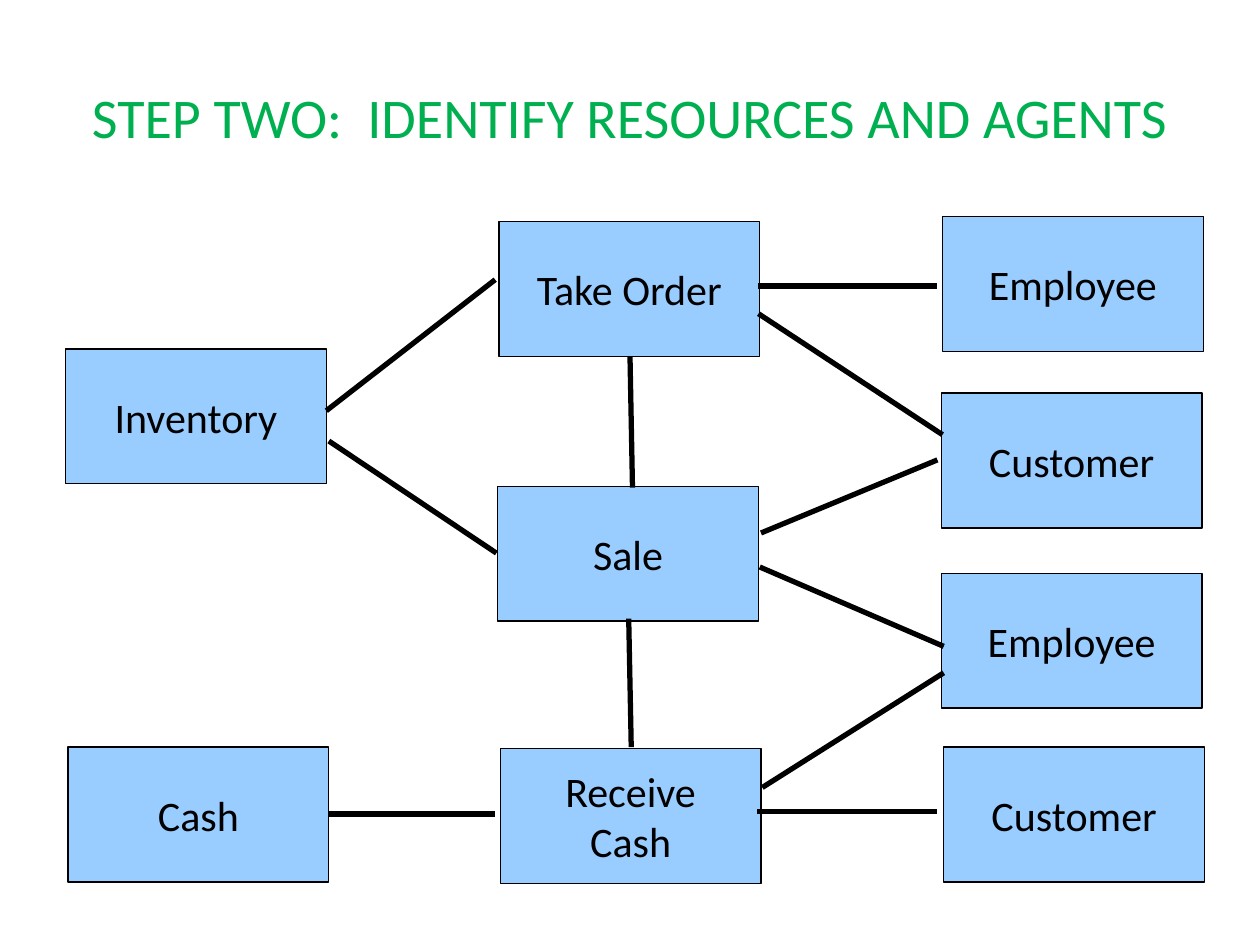
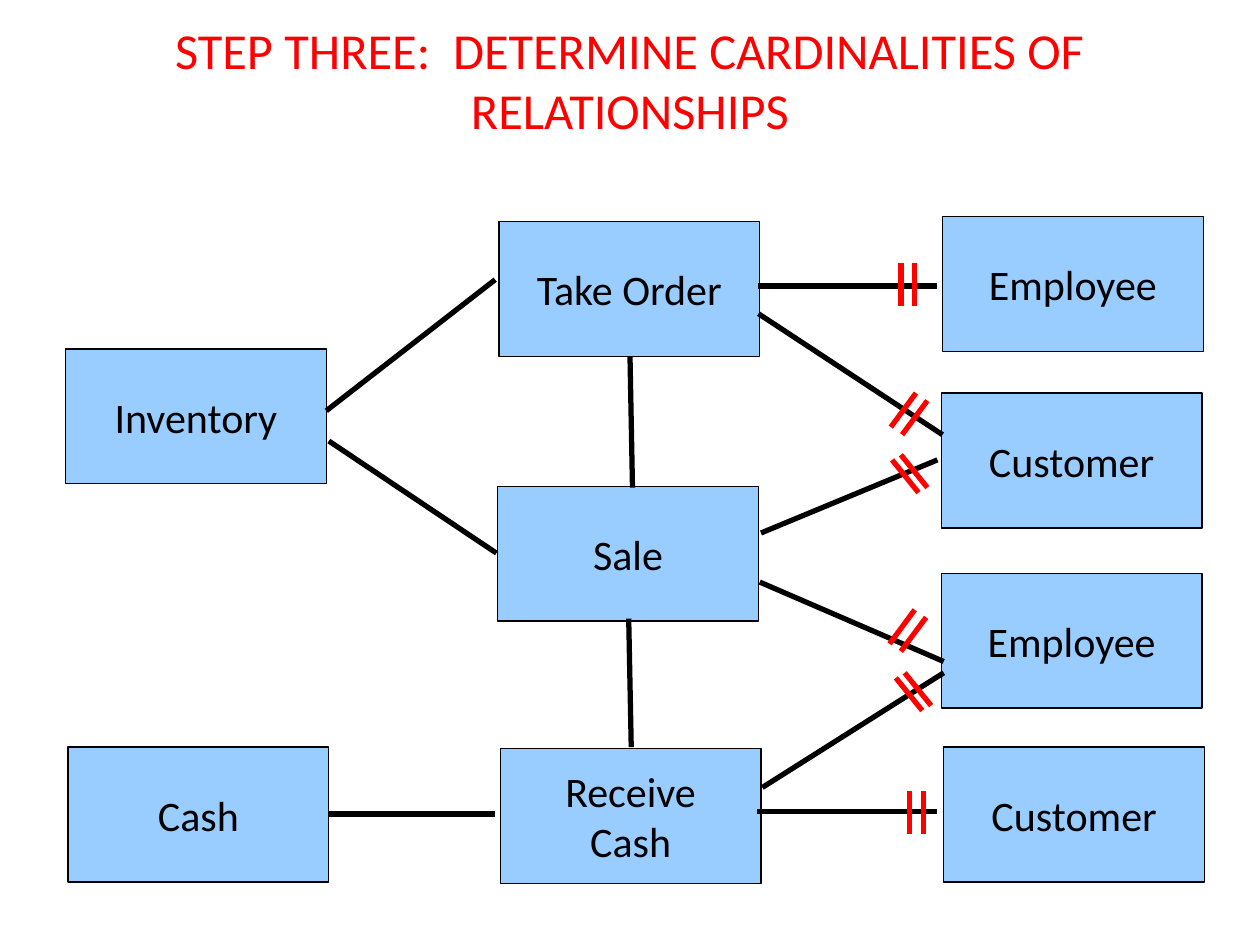
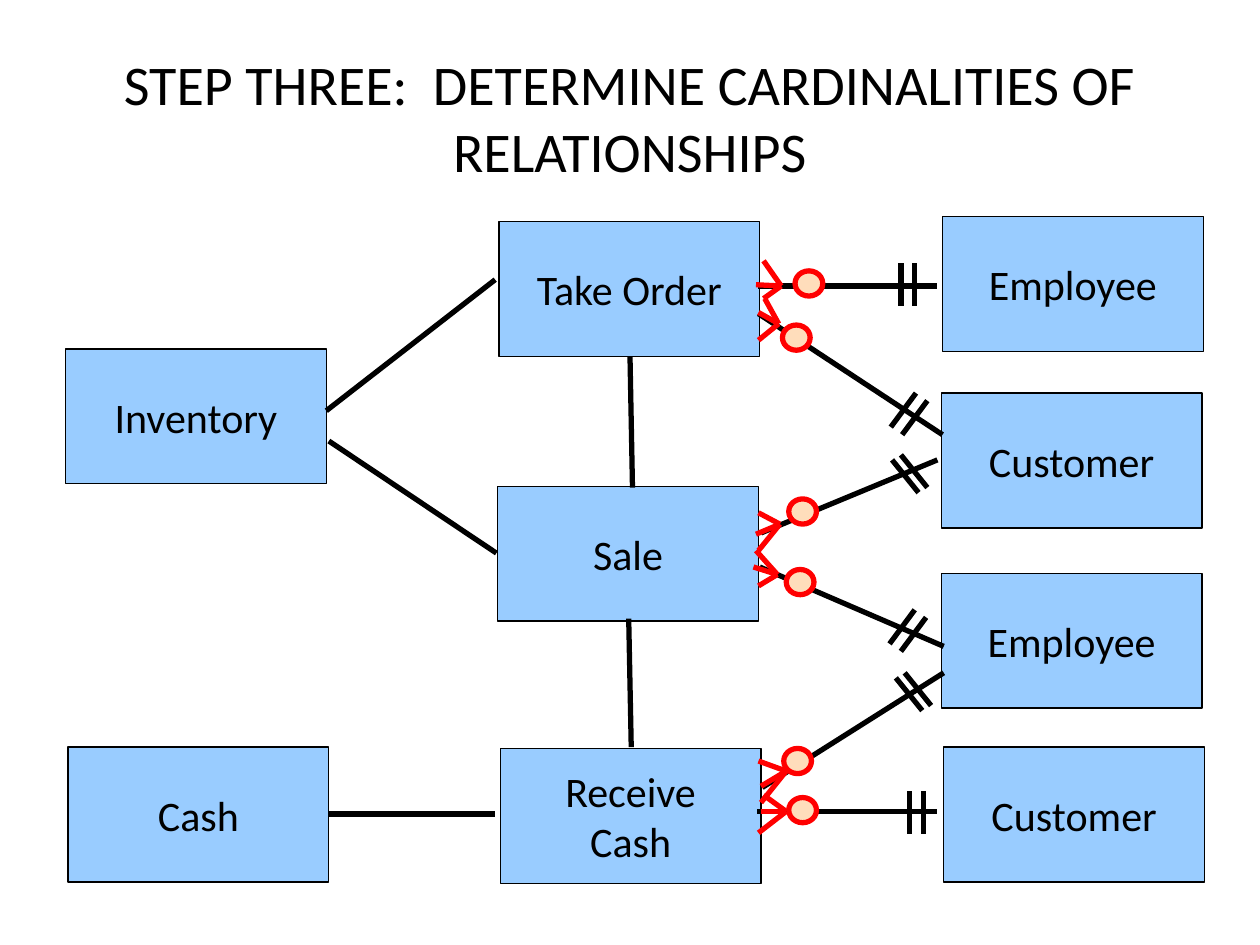
import pptx
import pptx.dml.color
import pptx.enum.shapes
import pptx.enum.text
import pptx.util
from lxml import etree
from pptx.util import Inches

FONT = "Calibri"
BLACK, RED, GREEN = "000000", "FF0000", "00B050"
BOX_FILL, CIRCLE_FILL = "99CCFF", "FFDDBB"
BOX_SIZE = (2.07, 1.07)
CIRCLE_SIZE = (0.22, 0.2)
THIN, THICK = 0.75, 3

STEP_THREE = "STEP THREE:  DETERMINE CARDINALITIES OF RELATIONSHIPS"

# Per slide: title, its top, height, size and colour, vertical shift of the
# link from Sale to Employee, colour of the "one" ticks, whether "many" shows
SLIDES = [
    ("STEP TWO:  IDENTIFY RESOURCES AND AGENTS", 0.3, 1.25, 32, GREEN, 0, None, False),
    (STEP_THREE, 0.17, 0.92, 28.8, RED, 0.12, RED, False),
    (STEP_THREE, 0.3, 1.25, 32, BLACK, 0, BLACK, True),
]

# Entity lines, left, top
RESOURCES = [(["Inventory"], 0.52, 2.77), (["Cash"], 0.54, 5.93)]
EVENTS = [(["Take Order"], 3.96, 1.76), (["Sale"], 3.95, 3.86),
          (["Receive", "Cash"], 3.97, 5.94)]
AGENTS = [(["Employee"], 7.48, 1.72), (["Customer"], 7.47, 3.12),
          (["Employee"], 7.47, 4.55), (["Customer"], 7.49, 5.93)]

# Start and end of each relationship
LINKS = [
    ((5, 2.83), (5.02, 3.87)),
    ((4.99, 4.91), (5.01, 5.93)),
    ((2.59, 3.26), (3.93, 2.22)),
    ((2.61, 3.5), (3.94, 4.39)),
    ((2.61, 6.46), (3.93, 6.46)),
    ((6.02, 2.27), (7.44, 2.27)),
    ((6.02, 2.49), (7.48, 3.45)),
    ((6.04, 4.23), (7.44, 3.65)),
    ((6.05, 6.25), (7.49, 5.34)),
    ((6.01, 6.44), (7.44, 6.44)),
]
SALE_EMPLOYEE = ((6.03, 4.5), (7.49, 5.13))

# Tick direction by slope of the link: length of a tick, step to its twin
TICKS = {
    "level": ((0, 0.34), (0.11, 0)),
    "falling": ((-0.2, 0.27), (0.09, 0.06)),
    "rising": ((0.21, 0.26), (0.07, -0.04)),
}
ONE_MARKS = [
    ("level", 7.15, 2.09), ("falling", 7.27, 3.12), ("rising", 7.08, 3.65),
    ("falling", 7.26, 4.84), ("rising", 7.11, 5.38), ("level", 7.22, 6.28),
]

# Left and top of the circle, tip of the crow's foot, ends of its toes
MANY_MARKS = [
    ((6.31, 2.15), (6.2, 2.27), [(6.06, 2.07), (6, 2.26), (6.06, 2.37)]),
    ((6.21, 2.58), (6.18, 2.57), [(6.07, 2.37), (6.02, 2.48), (6.02, 2.7)]),
    ((6.26, 3.96), (6.19, 4.16), [(6.02, 4.07), (6, 4.24), (6.02, 4.37)]),
    ((6.24, 4.52), (6.17, 4.56), [(6, 4.37), (5.98, 4.5), (6.02, 4.65)]),
    ((6.22, 5.94), (6.24, 6.12), [(6.02, 6.04), (6.04, 6.24), (6.04, 6.37)]),
    ((6.26, 6.33), (6.24, 6.44), [(6.06, 6.31), (6.04, 6.44), (6.02, 6.61)]),
]


def rgb(colour):
    return pptx.dml.color.RGBColor.from_string(colour)


def write(paragraph, text, size, colour):
    paragraph.alignment = pptx.enum.text.PP_ALIGN.CENTER
    run = paragraph.add_run()
    run.text = text
    run.font.name = FONT
    run.font.size = pptx.util.Pt(size)
    run.font.color.rgb = rgb(colour)


def add_title(slide, text, top, height, size, colour):
    title = slide.shapes.title
    title.left, title.top = Inches(0.5), Inches(top)
    title.width, title.height = Inches(9), Inches(height)
    frame = title.text_frame
    frame.auto_size = pptx.enum.text.MSO_AUTO_SIZE.NONE
    frame.vertical_anchor = pptx.enum.text.MSO_ANCHOR.MIDDLE
    write(frame.paragraphs[0], text, size, colour)


def add_outlined(slide, kind, position, size, fill, line, weight):
    shape = slide.shapes.add_shape(kind, *map(Inches, position + size))
    shape.shadow.inherit = False
    shape.fill.solid()
    shape.fill.fore_color.rgb = rgb(fill)
    shape.line.color.rgb = rgb(line)
    shape.line.width = pptx.util.Pt(weight)
    return shape


def add_entity(slide, lines, left, top):
    box = add_outlined(slide, pptx.enum.shapes.MSO_SHAPE.RECTANGLE,
                       (left, top), BOX_SIZE, BOX_FILL, BLACK, THIN)
    frame = box.text_frame
    frame.word_wrap = False
    frame.vertical_anchor = pptx.enum.text.MSO_ANCHOR.MIDDLE
    for index, line in enumerate(lines):
        paragraph = frame.add_paragraph() if index else frame.paragraphs[0]
        write(paragraph, line, 24, BLACK)


def add_line(slide, start, end, colour):
    line = slide.shapes.add_connector(
        pptx.enum.shapes.MSO_CONNECTOR.STRAIGHT, *map(Inches, start + end))
    line.line.color.rgb = rgb(colour)
    line.line.width = pptx.util.Pt(THICK)
    etree.SubElement(line._element.spPr, pptx.oxml.ns.qn("a:effectLst"))


def add_one_mark(slide, slope, x, y, colour):
    (dx, dy), (step_x, step_y) = TICKS[slope]
    for tick in range(2):
        left, top = x + tick * step_x, y + tick * step_y
        add_line(slide, (left, top), (left + dx, top + dy), colour)


def add_many_mark(slide, circle, tip, toes):
    add_outlined(slide, pptx.enum.shapes.MSO_SHAPE.OVAL,
                 circle, CIRCLE_SIZE, CIRCLE_FILL, RED, THICK)
    for toe in toes:
        add_line(slide, tip, toe, RED)


def main():
    deck = pptx.Presentation()
    deck.slide_width, deck.slide_height = Inches(10), Inches(7.5)
    title_only = deck.slide_layouts[5]
    for *title, shift, tick_colour, shows_many in SLIDES:
        slide = deck.slides.add_slide(title_only)
        add_title(slide, *title)
        for entity in RESOURCES + EVENTS + AGENTS:
            add_entity(slide, *entity)
        shifted = tuple((x, y + shift) for x, y in SALE_EMPLOYEE)
        for start, end in LINKS + [shifted]:
            add_line(slide, start, end, BLACK)
        if tick_colour:
            for mark in ONE_MARKS:
                add_one_mark(slide, *mark, tick_colour)
        if shows_many:
            for mark in MANY_MARKS:
                add_many_mark(slide, *mark)
    deck.save("out.pptx")


if __name__ == "__main__":
    main()
